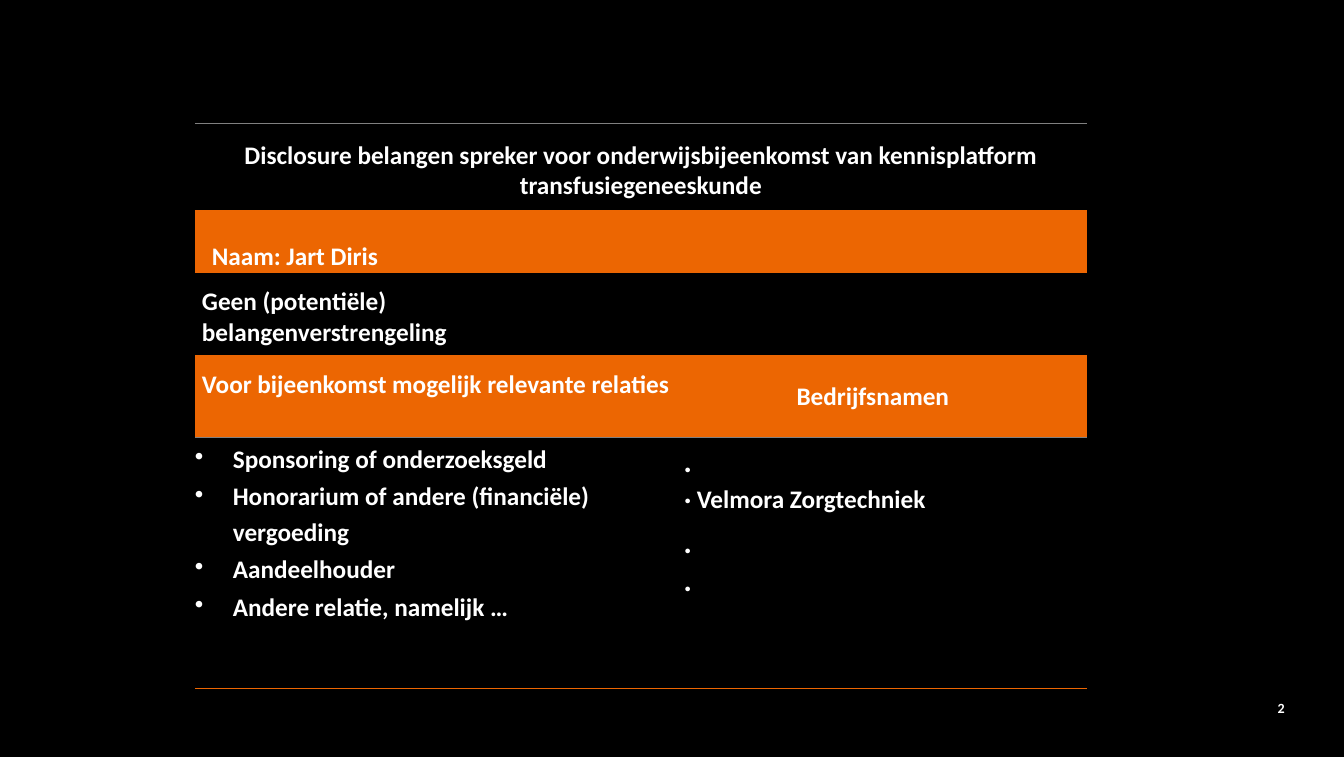
from lxml import etree
from pptx import Presentation
from pptx.dml.color import RGBColor
from pptx.enum.text import MSO_ANCHOR, PP_ALIGN
from pptx.oxml.ns import qn
from pptx.util import Pt

LEFT, CENTER, RIGHT = PP_ALIGN.LEFT, PP_ALIGN.CENTER, PP_ALIGN.RIGHT
MIDDLE = MSO_ANCHOR.MIDDLE
BLACK = RGBColor(0x00, 0x00, 0x00)
WHITE = RGBColor(0xFF, 0xFF, 0xFF)
ORANGE = RGBColor(0xEC, 0x66, 0x02)
GRAY = RGBColor(0x80, 0x80, 0x80)
NO_STYLE_NO_GRID = "{2D5ABB26-0587-4C30-8999-92F81FD0307C}"


def write_paragraph(paragraph, text, size, **formats):
    for name, value in formats.items():
        setattr(paragraph, name, value)
    run = paragraph.add_run()
    run.text = text
    run_format = {"name": "Calibri", "size": Pt(size), "bold": True}
    for name, value in run_format.items():
        setattr(run.font, name, value)
    run.font.color.rgb = WHITE


def add_border(cell, side, color):
    """Draw one cell border; side is lnT or lnB."""
    line = etree.SubElement(cell._tc.get_or_add_tcPr(), qn(f"a:{side}"), w=str(Pt(1)))
    fill = etree.SubElement(line, qn("a:solidFill"))
    etree.SubElement(fill, qn("a:srgbClr"), val=str(color))


prs = Presentation()
prs.slide_width, prs.slide_height = Pt(958.32), Pt(540)
slide = prs.slides.add_slide(prs.slide_layouts[6])
slide.background.fill.solid()
slide.background.fill.fore_color.rgb = BLACK

# Disclosure table
column_widths = [344, 292]
row_heights = [62.5, 44, 58.5, 59, 179]
disclosure = slide.shapes.add_table(
    len(row_heights), len(column_widths),
    Pt(139), Pt(88), Pt(sum(column_widths)), Pt(sum(row_heights))).table
disclosure.first_row = disclosure.horz_banding = False
disclosure._tbl.tblPr.find(qn("a:tableStyleId")).text = NO_STYLE_NO_GRID
for column, width in zip(disclosure.columns, column_widths):
    column.width = Pt(width)
for row, height in zip(disclosure.rows, row_heights):
    row.height = Pt(height)

borders = {0: [("lnT", GRAY), ("lnB", ORANGE)],
           1: [("lnT", ORANGE)],
           3: [("lnB", GRAY)],
           4: [("lnT", GRAY), ("lnB", ORANGE)]}
tinted_rows = (1, 3)
for row_index, row in enumerate(disclosure.rows):
    for cell in row.cells:
        cell.margin_left = cell.margin_right = cell.margin_top = cell.margin_bottom = 0
        for side, color in borders.get(row_index, []):
            add_border(cell, side, color)
        if row_index in tinted_rows:
            cell.fill.solid()
            cell.fill.fore_color.rgb = ORANGE
            tint = cell._tc.tcPr.find(".//" + qn("a:srgbClr"))
            etree.SubElement(tint, qn("a:alpha"), val="20000")
        else:
            cell.fill.background()
for row_index in (0, 1):
    disclosure.cell(row_index, 0).merge(disclosure.cell(row_index, 1))

# Row, column, text, alignment, line spacing, left, top and right margin
statements = [
    (0, 0, "Disclosure belangen spreker voor onderwijsbijeenkomst van "
           "kennisplatform transfusiegeneeskunde", CENTER, 1.0, 0, 12, 0),
    (1, 0, "Naam: Jart Diris", LEFT, 1.0, 12, 22, 0),
    (2, 0, "Geen (potentiële) belangenverstrengeling", LEFT, 1.0, 5, 10, 60),
    (3, 0, "Voor bijeenkomst mogelijk relevante relaties", LEFT, Pt(25.3), 5, 7, 0),
    (3, 1, "Bedrijfsnamen", LEFT, 1.0, 85, 19, 0),
]
for row_index, column_index, text, alignment, spacing, left, top, right in statements:
    cell = disclosure.cell(row_index, column_index)
    cell.margin_left, cell.margin_top, cell.margin_right = Pt(left), Pt(top), Pt(right)
    write_paragraph(cell.text_frame.paragraphs[0], text, 18,
                    alignment=alignment, line_spacing=spacing)

# Relations and companies: text, line spacing, space before
relations = [
    ("Sponsoring of onderzoeksgeld", Pt(26.9), 0),
    ("Honorarium of andere (financiële) vergoeding", Pt(25.3), 1.6),
    ("Aandeelhouder", Pt(26.4), 0),
    ("Andere relatie, namelijk …", Pt(26.9), 0),
]
companies = [
    ("·", 1.0, 0),
    ("· Velmora Zorgtechniek", 1.0, 0),
    ("·", 1.0, 14),
    ("·", Pt(26.9), 0),
]
relations_cell, companies_cell = disclosure.cell(4, 0), disclosure.cell(4, 1)
companies_cell.margin_left, companies_cell.margin_top = Pt(5), Pt(11.5)
for cell, entries in ((relations_cell, relations), (companies_cell, companies)):
    frame = cell.text_frame
    for index, (text, spacing, before) in enumerate(entries):
        paragraph = frame.add_paragraph() if index else frame.paragraphs[0]
        if cell is relations_cell:
            properties = paragraph._p.get_or_add_pPr()
            properties.set("marL", str(Pt(27)))
            properties.set("indent", str(-Pt(27)))
            etree.SubElement(properties, qn("a:buChar"), char="•")
        write_paragraph(paragraph, text, 18, line_spacing=spacing, space_before=Pt(before))

# Slide number
number_frame = slide.shapes.add_textbox(Pt(893.5), Pt(499), Pt(22.5), Pt(11.5)).text_frame
frame_format = {"margin_left": 0, "margin_right": 0, "margin_top": 0, "margin_bottom": 0,
                "word_wrap": True, "vertical_anchor": MIDDLE}
for name, value in frame_format.items():
    setattr(number_frame, name, value)
write_paragraph(number_frame.paragraphs[0], "2", 10, alignment=RIGHT)

prs.save("out.pptx")
